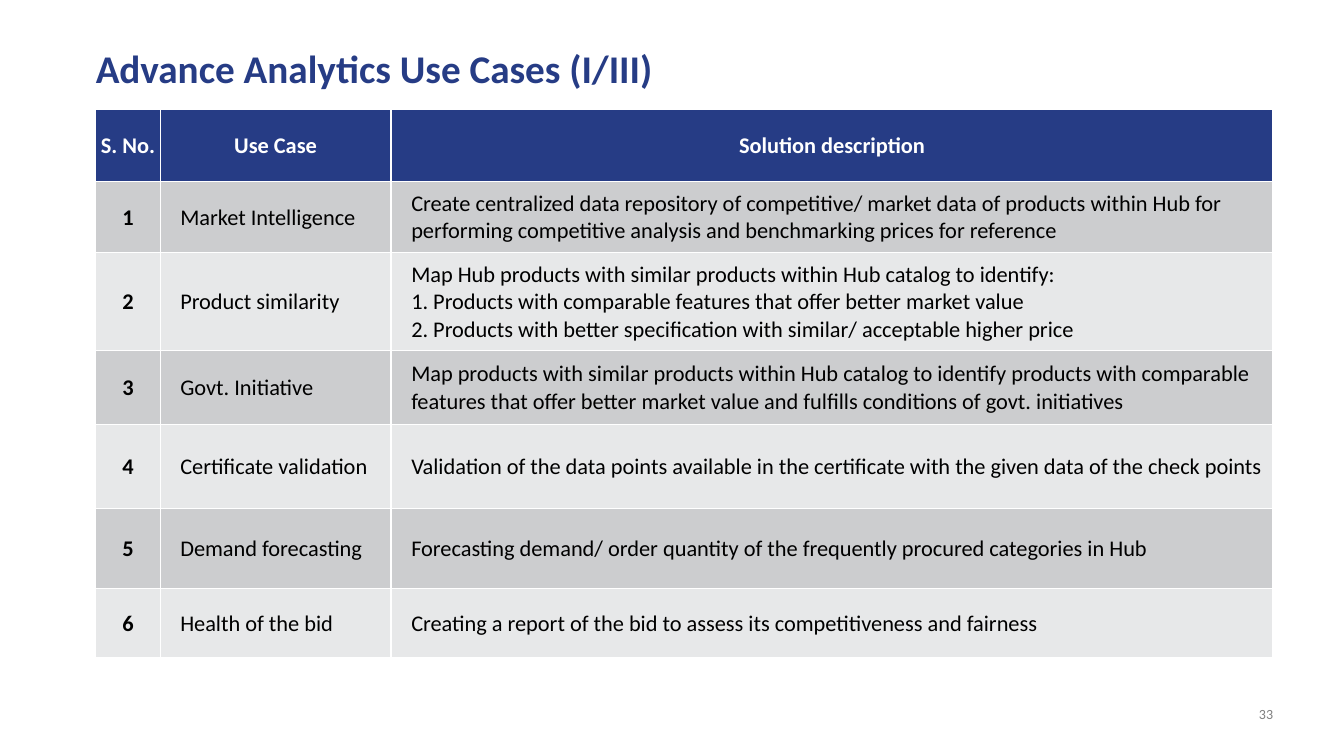
"""Build the slide that lists advance analytics use cases in a table."""
from pptx import Presentation
from pptx.dml.color import RGBColor
from pptx.enum.text import MSO_ANCHOR, PP_ALIGN
from pptx.util import Pt

NAVY = RGBColor(0x26, 0x3C, 0x85)
WHITE = RGBColor(0xFF, 0xFF, 0xFF)
BLACK = RGBColor(0x00, 0x00, 0x00)
GRAY = RGBColor(0x80, 0x80, 0x80)
DARK_BAND = RGBColor(0xCC, 0xCD, 0xCF)
LIGHT_BAND = RGBColor(0xE7, 0xE8, 0xE9)

LEFT = 68.4
WIDTH = 841
COLUMN_WIDTHS = [46, 165, 630]
ROW_HEIGHTS = [51, 51, 70, 52.5, 60, 57.6, 49]
LEFT_MARGINS = [0.7, 14.4, 14.4]
RIGHT_MARGINS = [0.7, 0.7, 5.8]

HEADER = ("S. No.", "Use Case", "Solution description")
USE_CASES = [
    ("Market Intelligence",
     "Create centralized data repository of competitive/ market data of products within Hub for "
     "performing competitive analysis and benchmarking prices for reference"),
    ("Product similarity",
     "Map Hub products with similar products within Hub catalog to identify:\n"
     "1. Products with comparable features that offer better market value\n"
     "2. Products with better specification with similar/ acceptable higher price"),
    ("Govt. Initiative",
     "Map products with similar products within Hub catalog to identify products with comparable "
     "features that offer better market value and fulfills conditions of govt. initiatives"),
    ("Certificate validation",
     "Validation of the data points available in the certificate with the given data of the check points"),
    ("Demand forecasting",
     "Forecasting demand/ order quantity of the frequently procured categories in Hub"),
    ("Health of the bid",
     "Creating a report of the bid to assess its competitiveness and fairness"),
]


def write_text(text_frame, text, size, color, bold, alignment):
    paragraph = text_frame.paragraphs[0]
    paragraph.text = text
    paragraph.alignment = alignment
    for run in paragraph.runs:
        run.font.name = "Calibri"
        run.font.size = Pt(size)
        run.font.bold = bold
        run.font.color.rgb = color


def set_margins(target, left=0, top=0, right=0, bottom=0):
    target.margin_left = Pt(left)
    target.margin_top = Pt(top)
    target.margin_right = Pt(right)
    target.margin_bottom = Pt(bottom)


presentation = Presentation()
presentation.slide_width = Pt(960)
presentation.slide_height = Pt(540)
slide = presentation.slides.add_slide(presentation.slide_layouts[5])

title = slide.shapes.title
title.left, title.top, title.width, title.height = Pt(LEFT), Pt(35.3), Pt(WIDTH), Pt(30.2)
set_margins(title.text_frame)
title.text_frame.vertical_anchor = MSO_ANCHOR.TOP
write_text(title.text_frame, "Advance Analytics Use Cases (I/III)", 28, NAVY, True, PP_ALIGN.LEFT)
title.text_frame.paragraphs[0].line_spacing = 0.9

rows = [HEADER] + [(str(number), *use_case) for number, use_case in enumerate(USE_CASES, 1)]
table = slide.shapes.add_table(len(rows), len(HEADER), Pt(LEFT), Pt(78.5),
                               Pt(WIDTH), Pt(sum(ROW_HEIGHTS))).table
for column, width in zip(table.columns, COLUMN_WIDTHS):
    column.width = Pt(width)

for row_index, values in enumerate(rows):
    table.rows[row_index].height = Pt(ROW_HEIGHTS[row_index])
    is_header = row_index == 0
    band = DARK_BAND if row_index % 2 else LIGHT_BAND
    for column_index, value in enumerate(values):
        cell = table.cell(row_index, column_index)
        cell.fill.solid()
        cell.fill.fore_color.rgb = NAVY if is_header else band
        cell.vertical_anchor = MSO_ANCHOR.MIDDLE
        set_margins(cell, 0.7 if is_header else LEFT_MARGINS[column_index], 0.7,
                    0.7 if is_header else RIGHT_MARGINS[column_index])
        emphasized = is_header or column_index == 0
        write_text(cell.text_frame, value, 16, WHITE if is_header else BLACK, emphasized,
                   PP_ALIGN.CENTER if emphasized else PP_ALIGN.LEFT)

page_number = slide.shapes.add_textbox(Pt(879), Pt(504), Pt(30.4), Pt(12.2))
set_margins(page_number.text_frame)
page_number.text_frame.word_wrap = True
page_number.text_frame.vertical_anchor = MSO_ANCHOR.BOTTOM
write_text(page_number.text_frame, "33", 10, GRAY, False, PP_ALIGN.RIGHT)

presentation.save("out.pptx")
